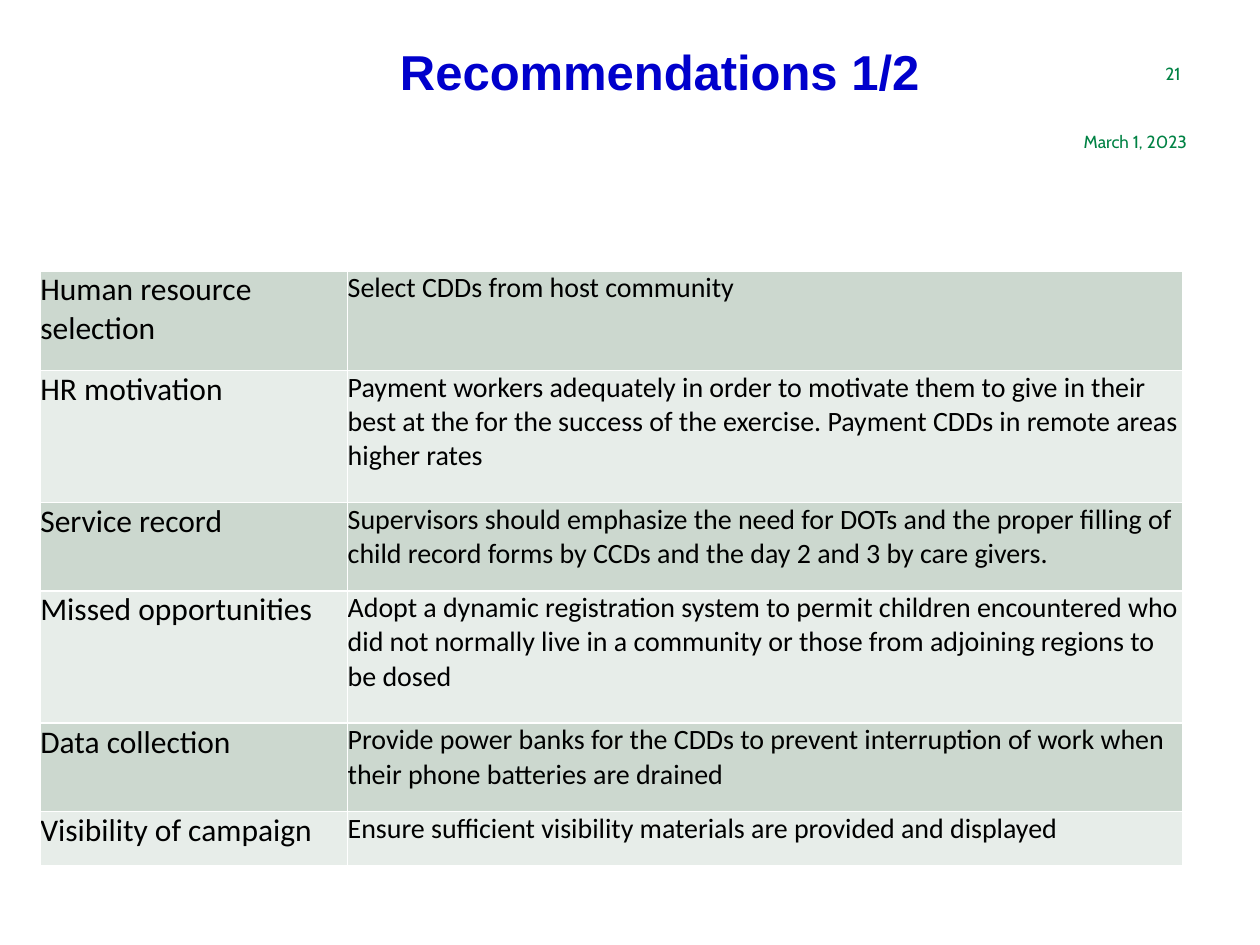
from dataclasses import dataclass

from lxml import etree
from pptx import Presentation
from pptx.dml.color import RGBColor
from pptx.enum.text import PP_ALIGN
from pptx.oxml.ns import qn
from pptx.slide import Slide
from pptx.table import _Cell
from pptx.util import Inches, Pt

CENTER, RIGHT = PP_ALIGN.CENTER, PP_ALIGN.RIGHT

BLUE = RGBColor(0x00, 0x00, 0xCC)
GREEN = RGBColor(0x00, 0x82, 0x44)
BLACK = RGBColor(0x00, 0x00, 0x00)
WHITE = RGBColor(0xFF, 0xFF, 0xFF)
BANDS = (RGBColor(0xCC, 0xD8, 0xCF), RGBColor(0xE7, 0xED, 0xE9))

PAGE_WIDTH, PAGE_HEIGHT = Inches(10), Inches(7.5)
TABLE_LEFT, TABLE_TOP = Inches(0.32), Inches(2.15)
COLUMN_WIDTHS = (Inches(2.44), Inches(6.63))
COLUMN_SIZES = (18, 16)


@dataclass(frozen=True)
class Label:
    text: str
    left: float
    top: float
    width: float
    height: float
    font: str
    size: float
    color: RGBColor
    align: PP_ALIGN
    bold: bool = False
    inset: tuple[float, float] = (0, 0)
    line_spacing: float = 1.0


@dataclass(frozen=True)
class Recommendation:
    topic: str
    action: str
    height: float


LABELS = (
    Label("21", 5.86, 0.5, 3.51, 0.17, "Cabin", 10, GREEN, RIGHT),
    Label("March 1, 2023", 5.91, 1.04, 3.51, 0.17, "Cabin", 10, GREEN, RIGHT),
    Label("Recommendations 1/2", 1.54, 0.33, 7.39, 0.88, "Arial", 28, BLUE, CENTER,
          bold=True, inset=(0.1, 0.05), line_spacing=0.9),
)

RECOMMENDATIONS = (
    Recommendation("Human resource selection", "Select CDDs from host community", 0.79),
    Recommendation(
        "HR motivation",
        "Payment workers adequately in order to motivate them to give in their best at "
        "the for the success of the exercise. Payment CDDs in remote areas higher rates",
        1.05),
    Recommendation(
        "Service record",
        "Supervisors should emphasize the need for DOTs and the proper filling of child "
        "record forms by CCDs and the day 2 and 3 by care givers.",
        0.7),
    Recommendation(
        "Missed opportunities",
        "Adopt a dynamic registration system to permit children encountered who did not "
        "normally live in a community or those from adjoining regions to be dosed",
        1.05),
    Recommendation(
        "Data collection",
        "Provide power banks for the CDDs to prevent interruption of work when their "
        "phone batteries are drained",
        0.7),
    Recommendation(
        "Visibility of campaign",
        "Ensure sufficient visibility materials are provided and displayed",
        0.43),
)


def add_label(page: Slide, label: Label) -> None:
    box = page.shapes.add_textbox(Inches(label.left), Inches(label.top),
                                  Inches(label.width), Inches(label.height))
    frame = box.text_frame
    frame.word_wrap = True
    frame.margin_left = frame.margin_right = Inches(label.inset[0])
    frame.margin_top = frame.margin_bottom = Inches(label.inset[1])
    para = frame.paragraphs[0]
    para.text = label.text
    para.alignment = label.align
    para.line_spacing = label.line_spacing
    para.font.name = label.font
    para.font.size = Pt(label.size)
    para.font.bold = label.bold
    para.font.color.rgb = label.color


def add_borders(cell: _Cell, color: RGBColor, width: float) -> None:
    """Line all four sides; call before filling, as borders precede the fill in XML."""
    properties = cell._tc.get_or_add_tcPr()
    for side in ("a:lnL", "a:lnR", "a:lnT", "a:lnB"):
        line = etree.SubElement(properties, qn(side), w=str(Pt(width)))
        fill = etree.SubElement(line, qn("a:solidFill"))
        etree.SubElement(fill, qn("a:srgbClr"), val=str(color))


def fill_cell(cell: _Cell, text: str, size: float, band: RGBColor) -> None:
    add_borders(cell, WHITE, 1)
    cell.fill.solid()
    cell.fill.fore_color.rgb = band
    cell.margin_left = cell.margin_right = cell.margin_top = cell.margin_bottom = 0
    para = cell.text_frame.paragraphs[0]
    para.text = text
    para.font.name = "Calibri"
    para.font.size = Pt(size)
    para.font.color.rgb = BLACK


def add_recommendations(page: Slide) -> None:
    heights = [Inches(item.height) for item in RECOMMENDATIONS]
    table = page.shapes.add_table(len(heights), len(COLUMN_WIDTHS), TABLE_LEFT, TABLE_TOP,
                                  sum(COLUMN_WIDTHS), sum(heights)).table
    table.first_row = table.horz_banding = False
    for column, width in zip(table.columns, COLUMN_WIDTHS):
        column.width = width
    for index, (row, item) in enumerate(zip(table.rows, RECOMMENDATIONS)):
        row.height = heights[index]
        band = BANDS[index % len(BANDS)]
        for cell, text, size in zip(row.cells, (item.topic, item.action), COLUMN_SIZES):
            fill_cell(cell, text, size, band)


def main() -> None:
    deck = Presentation()
    deck.slide_width, deck.slide_height = PAGE_WIDTH, PAGE_HEIGHT
    page = deck.slides.add_slide(deck.slide_layouts[6])
    for label in LABELS:
        add_label(page, label)
    add_recommendations(page)
    deck.save("out.pptx")


if __name__ == "__main__":
    main()
